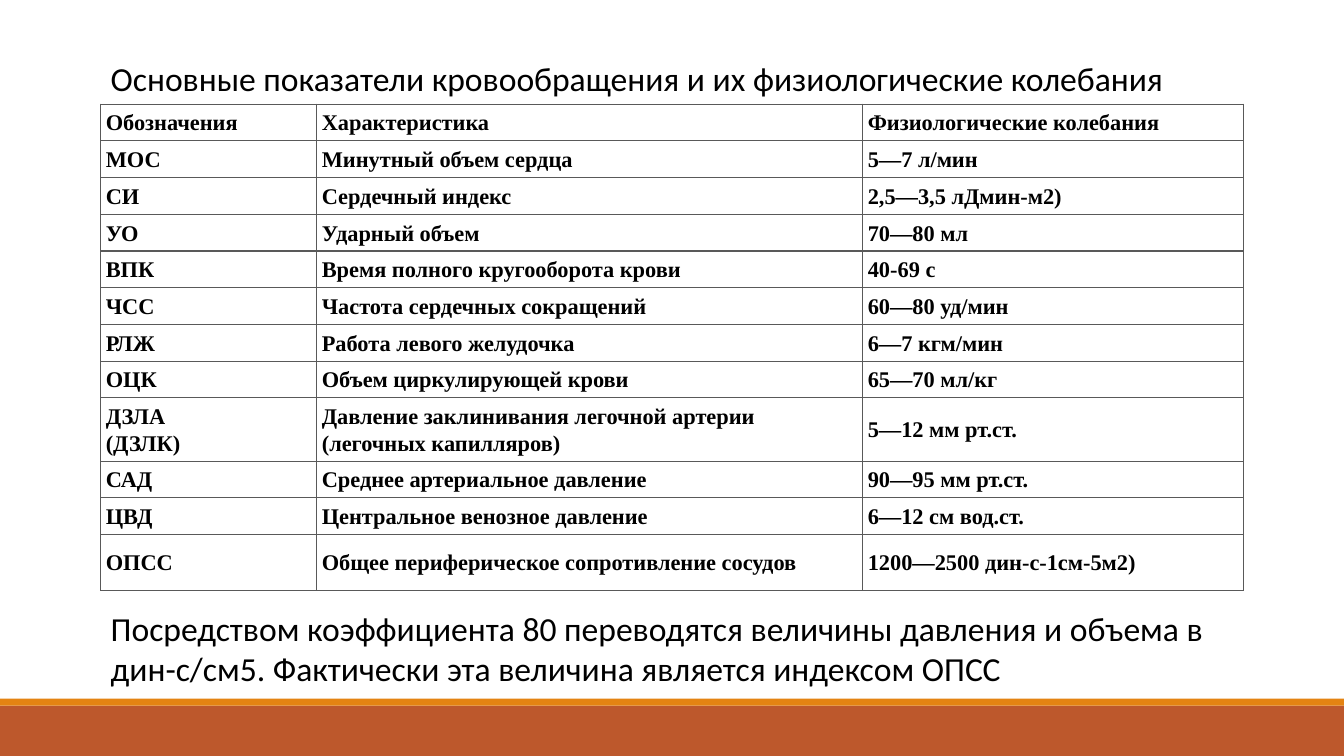
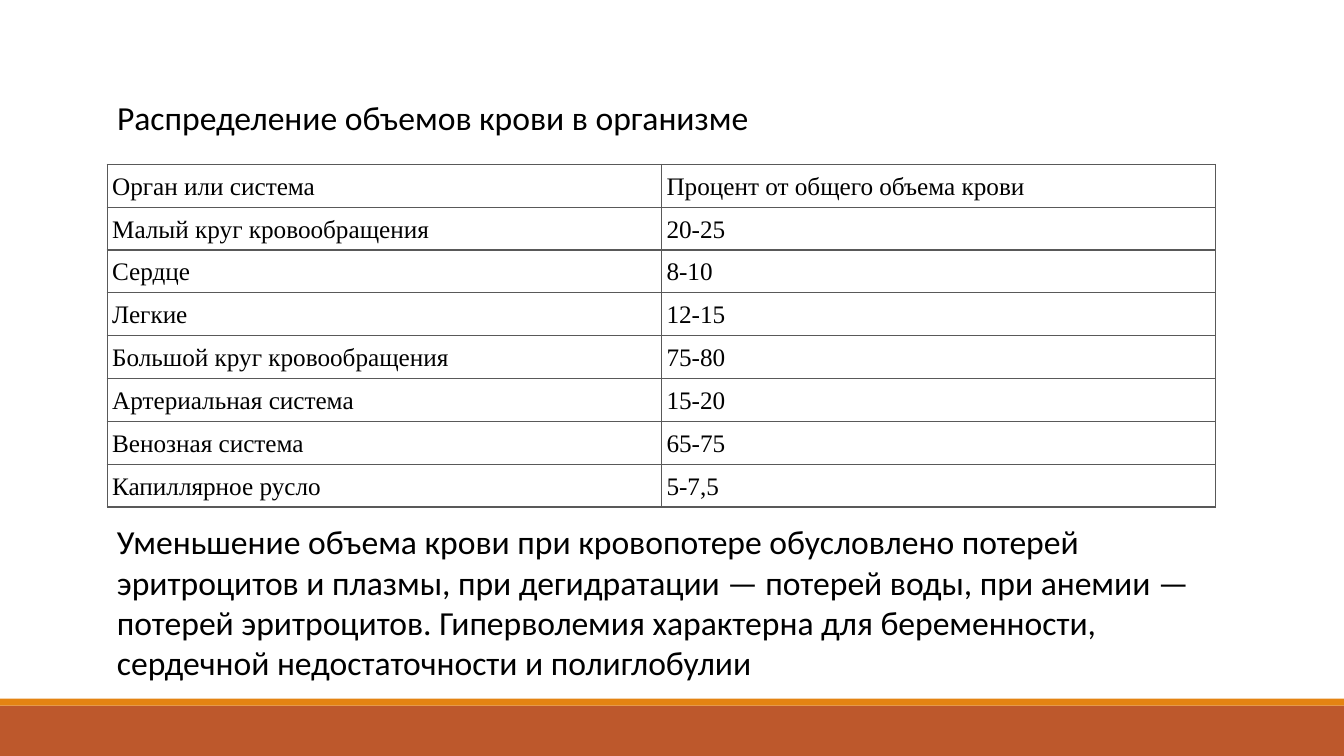
from dataclasses import dataclass

from lxml import etree
from pptx import Presentation
from pptx.dml.color import RGBColor
from pptx.enum import shapes, text
from pptx.oxml import ns
from pptx.util import Pt

CIRCULATION = {
    "left": 72, "width": 816.5,
    "title": "Основные показатели кровообращения и их физиологические колебания",
    "title_top": 38, "title_width": 816.5,
    "table_top": 74.4,
    "columns": [154.3, 390, 272.2],
    "row_height": 25.9, "tall_rows": {8: 45, 11: 40},
    "size": 16, "bold": True,
    "rows": [
        ("Обозначения", "Характеристика", "Физиологические колебания"),
        ("МОС", "Минутный объем сердца", "5—7 л/мин"),
        ("СИ", "Сердечный индекс", "2,5—3,5 лДмин-м2)"),
        ("УО", "Ударный объем", "70—80 мл"),
        ("ВПК", "Время полного кругооборота крови", "40-69 с"),
        ("ЧСС", "Частота сердечных сокращений", "60—80 уд/мин"),
        ("РЛЖ", "Работа левого желудочка", "6—7 кгм/мин"),
        ("ОЦК", "Объем циркулирующей крови", "65—70 мл/кг"),
        ("ДЗЛА\n(ДЗЛК)",
         "Давление заклинивания легочной артерии (легочных капилляров)",
         "5—12 мм рт.ст."),
        ("САД", "Среднее артериальное давление", "90—95 мм рт.ст."),
        ("ЦВД", "Центральное венозное давление", "6—12 см вод.ст."),
        ("ОПСС", "Общее периферическое сопротивление сосудов",
         "1200—2500 дин-с-1см-5м2)"),
    ],
    "note": "Посредством коэффициента 80 переводятся величины давления и объема "
            "в дин-с/см5. Фактически эта величина является индексом ОПСС",
    "note_top": 430.6, "note_height": 65.4,
}

BLOOD_VOLUME = {
    "left": 76.5, "width": 792,
    "title": "Распределение объемов крови в организме",
    "title_top": 65.7, "title_width": 470,
    "table_top": 117.4,
    "columns": [396, 396],
    "row_height": 30.6, "tall_rows": {},
    "size": 18, "bold": False,
    "rows": [
        ("Орган или система", "Процент от общего объема крови"),
        ("Малый круг кровообращения", "20-25"),
        ("Сердце", "8-10"),
        ("Легкие", "12-15"),
        ("Большой круг кровообращения", "75-80"),
        ("Артериальная система", "15-20"),
        ("Венозная система", "65-75"),
        ("Капиллярное русло", "5-7,5"),
    ],
    "note": "Уменьшение объема крови при кровопотере обусловлено потерей "
            "эритроцитов и плазмы, при дегидратации — потерей воды, при анемии — "
            "потерей эритроцитов. Гиперволемия характерна для беременности, "
            "сердечной недостаточности и полиглобулии",
    "note_top": 368.8, "note_height": 123.8,
}


@dataclass(frozen=True)
class Theme:
    width: float = 960
    height: float = 540
    band: str = "BD582C"
    stripe: str = "E48312"
    ink: str = "000000"
    border: str = "595959"
    border_width: float = 1
    text_font: str = "Calibri"
    table_font: str = "Times New Roman"
    text_size: float = 24
    title_height: float = 36
    cell_margin: float = 3.6
    cell_spacing: float = 1.07


THEME = Theme()
BANDS = [(504, 36, THEME.band), (499, 5, THEME.stripe)]


def add_run(paragraph, content, font, size, bold=False):
    run = paragraph.add_run()
    run.text = content
    run.font.name = font
    run.font.size = Pt(size)
    run.font.bold = bold
    run.font.color.rgb = RGBColor.from_string(THEME.ink)


def add_bands(slide):
    for top, height, color in BANDS:
        shape = slide.shapes.add_shape(
            shapes.MSO_SHAPE.RECTANGLE, 0, Pt(top), Pt(THEME.width), Pt(height))
        shape.shadow.inherit = False
        shape.fill.solid()
        shape.fill.fore_color.rgb = RGBColor.from_string(color)
        shape.line.fill.background()


def add_text(slide, content, left, top, width, height):
    box = slide.shapes.add_textbox(Pt(left), Pt(top), Pt(width), Pt(height))
    frame = box.text_frame
    frame.word_wrap = True
    frame.auto_size = text.MSO_AUTO_SIZE.SHAPE_TO_FIT_TEXT
    add_run(frame.paragraphs[0], content, THEME.text_font, THEME.text_size)


def add_borders(cell):
    properties = cell._tc.get_or_add_tcPr()
    for side in ("a:lnL", "a:lnR", "a:lnT", "a:lnB"):
        line = etree.SubElement(properties, ns.qn(side), w=str(Pt(THEME.border_width)))
        fill = etree.SubElement(line, ns.qn("a:solidFill"))
        etree.SubElement(fill, ns.qn("a:srgbClr"), val=THEME.border)


def fill_cell(cell, content, size, bold):
    add_borders(cell)
    cell.fill.background()
    cell.vertical_anchor = text.MSO_ANCHOR.MIDDLE
    cell.margin_left = cell.margin_right = Pt(THEME.cell_margin)
    cell.margin_top = cell.margin_bottom = Pt(THEME.cell_margin)
    paragraph = cell.text_frame.paragraphs[0]
    paragraph.line_spacing = THEME.cell_spacing
    for index, line in enumerate(content.split("\n")):
        if index:
            paragraph.add_line_break()
        add_run(paragraph, line, THEME.table_font, size, bold)


def add_data_table(slide, content):
    rows, columns = content["rows"], content["columns"]
    heights = [content["tall_rows"].get(index, content["row_height"])
               for index in range(len(rows))]
    table = slide.shapes.add_table(
        len(rows), len(columns), Pt(content["left"]), Pt(content["table_top"]),
        Pt(sum(columns)), Pt(sum(heights))).table
    table.first_row = table.horz_banding = False
    for column, width in zip(table.columns, columns):
        column.width = Pt(width)
    for row, height, values in zip(table.rows, heights, rows):
        row.height = Pt(height)
        for cell, value in zip(row.cells, values):
            fill_cell(cell, value, content["size"], content["bold"])


def add_table_slide(presentation, content):
    slide = presentation.slides.add_slide(presentation.slide_layouts[6])
    add_bands(slide)
    add_data_table(slide, content)
    add_text(slide, content["title"], content["left"], content["title_top"],
             content["title_width"], THEME.title_height)
    add_text(slide, content["note"], content["left"], content["note_top"],
             content["width"], content["note_height"])


def main():
    presentation = Presentation()
    presentation.slide_width = Pt(THEME.width)
    presentation.slide_height = Pt(THEME.height)
    for content in (CIRCULATION, BLOOD_VOLUME):
        add_table_slide(presentation, content)
    presentation.save("out.pptx")


if __name__ == "__main__":
    main()
